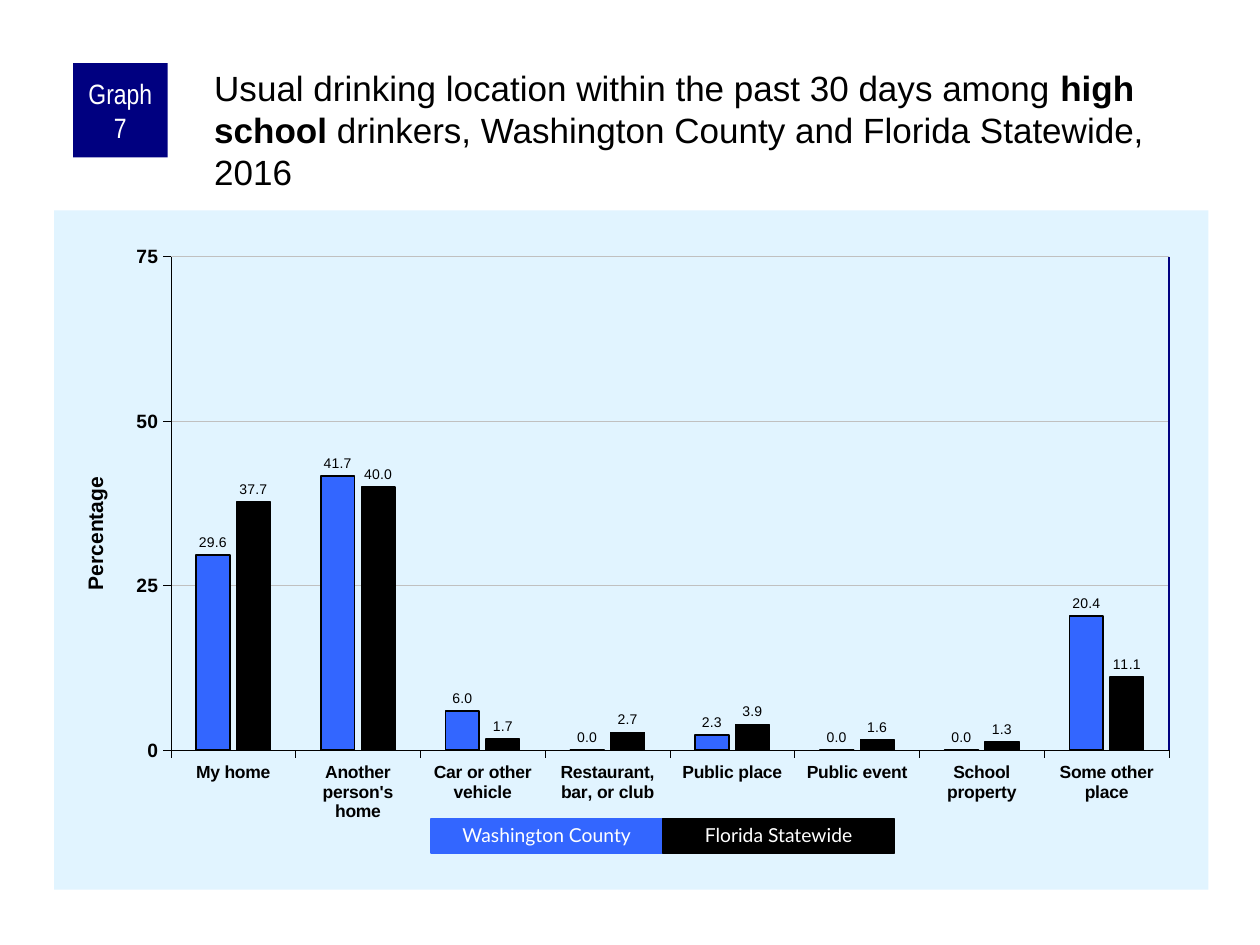
import pptx
import pptx.chart.data
import pptx.dml.color
import pptx.enum.chart
import pptx.enum.shapes
import pptx.enum.text
import pptx.oxml
import pptx.oxml.ns
import pptx.util
from lxml import etree

Inches = pptx.util.Inches
Pt = pptx.util.Pt

TITLE = [
    ("Usual drinking location within the past 30 days among ", False),
    ("high school", True),
    (" drinkers, Washington County and Florida Statewide, 2016", False),
]
BADGE = "Graph 7"
AXIS_TITLE = "Percentage"
LOCATIONS = [
    "My home", "Another person's home", "Car or other vehicle",
    "Restaurant, bar, or club", "Public place", "Public event",
    "School property", "Some other place",
]
SERIES = [
    {"name": "Washington County", "color": "3366FF", "border": 1, "format": "0.0",
     "values": [29.6, 41.7, 6, 0, 2.3, 0, 0, 20.4]},
    {"name": "Florida Statewide", "color": "000000", "border": 0.75, "format": "#,##0.0",
     "values": [37.7, 40, 1.7, 2.7, 3.9, 1.6, 1.3, 11.1]},
]
THEME = {
    "font": "Arial", "badge_font": "Arial Narrow", "legend_font": "Lato",
    "ink": "000000", "white": "FFFFFF", "navy": "000080",
    "panel": "E1F4FF", "grid": "C0C0C0",
    "title": 20, "badge": 16, "axis_title": 12, "legend": 11, "chart": 11.5,
    "category": 10, "value": 11, "label": 8, "hairline": 0.25,
}
CHART_BOX = (0.43, 1.67, 9.16, 5.39)
PLOT = {"x": 0.101, "y": 0.068, "w": 0.865, "h": 0.727}
LEGEND_BOX = (3.42, 6.5, 1.84, 0.27)


def rgb(color):
    return pptx.dml.color.RGBColor.from_string(color)


def style_font(font, size, color, name=THEME["font"], bold=False):
    font.name, font.size, font.bold = name, Pt(size), bold
    font.color.rgb = rgb(color)


def style_line(line, color, width):
    line.color.rgb = rgb(color)
    line.width = Pt(width)


def add_box(slide, box, text, fill, size, font_name, border=None):
    shape = slide.shapes.add_shape(
        pptx.enum.shapes.MSO_SHAPE.RECTANGLE, *map(Inches, box))
    shape.shadow.inherit = False
    shape.fill.solid()
    shape.fill.fore_color.rgb = rgb(fill)
    if border:
        style_line(shape.line, fill, border)
    else:
        shape.line.fill.background()
    frame = shape.text_frame
    frame.word_wrap = True
    frame.vertical_anchor = pptx.enum.text.MSO_ANCHOR.MIDDLE
    paragraph = frame.paragraphs[0]
    paragraph.text = text
    paragraph.alignment = pptx.enum.text.PP_ALIGN.CENTER
    style_font(paragraph.font, size, THEME["white"], font_name)
    return shape


def add_title(slide):
    frame = slide.shapes.add_textbox(*map(Inches, (1.67, 0.5, 7.92, 0.83))).text_frame
    frame.word_wrap = True
    frame.margin_left = frame.margin_top = Inches(0.03)
    frame.margin_right = frame.margin_bottom = 0
    paragraph = frame.paragraphs[0]
    for text, bold in TITLE:
        run = paragraph.add_run()
        run.text = text
        style_font(run.font, THEME["title"], THEME["ink"], bold=bold)


def style_axis(axis, size):
    axis.major_tick_mark = pptx.enum.chart.XL_TICK_MARK.OUTSIDE
    axis.minor_tick_mark = pptx.enum.chart.XL_TICK_MARK.NONE
    style_font(axis.tick_labels.font, size, THEME["ink"], bold=True)
    style_line(axis.format.line, THEME["ink"], THEME["hairline"])


def place_plot(chart):
    namespaces = pptx.oxml.ns.nsdecls("c", "a")
    chart_space = chart.element
    chart_space.find(pptx.oxml.ns.qn("c:chart")).addnext(pptx.oxml.parse_xml(
        f'<c:spPr {namespaces}><a:solidFill><a:srgbClr val="{THEME["panel"]}"/>'
        '</a:solidFill><a:ln><a:noFill/></a:ln></c:spPr>'))
    plot_area = chart_space.find(".//" + pptx.oxml.ns.qn("c:plotArea"))
    for layout in plot_area.findall(pptx.oxml.ns.qn("c:layout")):
        plot_area.remove(layout)
    modes = "".join(f'<c:{key}Mode val="edge"/>' for key in "xy")
    sizes = "".join(f'<c:{key} val="{value}"/>' for key, value in PLOT.items())
    plot_area.insert(0, pptx.oxml.parse_xml(
        f'<c:layout {namespaces}><c:manualLayout><c:layoutTarget val="inner"/>'
        f'{modes}{sizes}</c:manualLayout></c:layout>'))


def add_location_chart(slide):
    data = pptx.chart.data.CategoryChartData()
    data.categories = LOCATIONS
    for entry in SERIES:
        data.add_series(entry["name"], entry["values"])
    chart = slide.shapes.add_chart(
        pptx.enum.chart.XL_CHART_TYPE.COLUMN_CLUSTERED,
        *map(Inches, CHART_BOX), data).chart
    chart.has_legend = chart.has_title = False
    style_font(chart.font, THEME["chart"], THEME["ink"])
    style_axis(chart.category_axis, THEME["category"])

    axis = chart.value_axis
    style_axis(axis, THEME["value"])
    axis.minimum_scale, axis.maximum_scale, axis.major_unit = 0, 75, 25
    axis.tick_labels.number_format = "0"
    axis.tick_labels.number_format_is_linked = False
    style_line(axis.major_gridlines.format.line, THEME["grid"], THEME["hairline"])
    axis.axis_title.text_frame.text = AXIS_TITLE
    style_font(axis.axis_title.text_frame.paragraphs[0].runs[0].font,
               THEME["axis_title"], THEME["ink"], bold=True)

    plot = chart.plots[0]
    plot.gap_width, plot.overlap, plot.vary_by_categories = 150, -20, False
    for series, entry in zip(plot.series, SERIES):
        series.invert_if_negative = False
        series.format.fill.solid()
        series.format.fill.fore_color.rgb = rgb(entry["color"])
        style_line(series.format.line, THEME["ink"], entry["border"])
        labels = series.data_labels
        labels.show_value = True
        labels.position = pptx.enum.chart.XL_LABEL_POSITION.OUTSIDE_END
        labels.number_format = entry["format"]
        labels.number_format_is_linked = False
        style_font(labels.font, THEME["label"], THEME["ink"])
    place_plot(chart)


def add_right_edge(slide):
    left, top, width, height = CHART_BOX
    x = Inches(left + (PLOT["x"] + PLOT["w"]) * width)
    y_top = Inches(top + PLOT["y"] * height)
    y_bottom = Inches(top + (PLOT["y"] + PLOT["h"]) * height)
    edge = slide.shapes.add_connector(
        pptx.enum.shapes.MSO_CONNECTOR.STRAIGHT, x, y_top, x, y_bottom)
    style_line(edge.line, THEME["navy"], 1)
    etree.SubElement(edge.element.spPr, pptx.oxml.ns.qn("a:effectLst"))


def add_legend(slide):
    left, top, width, height = LEGEND_BOX
    for index, entry in enumerate(SERIES):
        shape = add_box(slide, (left + index * width, top, width, height), entry["name"],
                        entry["color"], THEME["legend"], THEME["legend_font"], 0.75)
        shape.text_frame.paragraphs[0].line_spacing = 0.9


def main():
    presentation = pptx.Presentation()
    presentation.slide_width, presentation.slide_height = Inches(10), Inches(7.5)
    slide = presentation.slides.add_slide(presentation.slide_layouts[6])
    add_location_chart(slide)
    add_right_edge(slide)
    badge = add_box(slide, (0.58, 0.5, 0.75, 0.75), BADGE, THEME["navy"],
                    THEME["badge"], THEME["badge_font"])
    frame = badge.text_frame
    frame.margin_left = frame.margin_right = Inches(0.05)
    frame.margin_top = frame.margin_bottom = 0
    add_title(slide)
    add_legend(slide)
    presentation.save("out.pptx")


if __name__ == "__main__":
    main()
